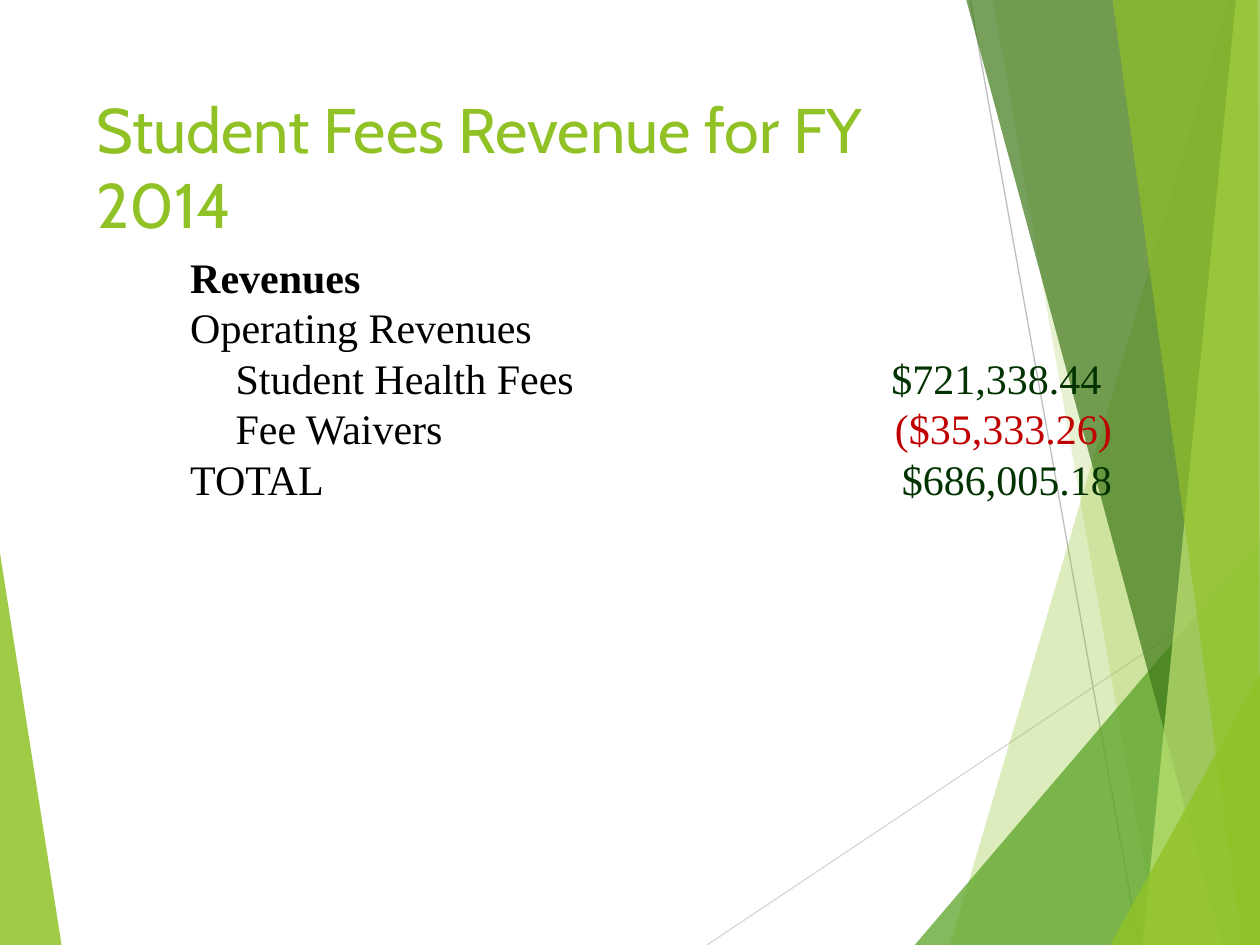
from pptx import Presentation
from pptx import util as u
from pptx.dml.color import RGBColor
from pptx.enum import shapes, text
from pptx.oxml.ns import qn
from lxml import etree

Pt = u.Pt
WIDTH, HEIGHT = 720, 540
LIME = RGBColor(0x90, 0xC2, 0x26)
GREEN = RGBColor(0x54, 0xA0, 0x21)
FOREST = RGBColor(0x3F, 0x78, 0x19)
PALE = RGBColor(0xC0, 0xE4, 0x74)
SILVER = RGBColor(0xBF, 0xBF, 0xBF)
LIGHT_GREY = RGBColor(0xD9, 0xD9, 0xD9)
BLACK = RGBColor(0, 0, 0)
INCOME = RGBColor(0, 0x33, 0)
DEDUCTION = RGBColor(0xC0, 0, 0)
PLAIN_TABLE = "{2D5ABB26-0587-4C30-8999-92F81FD0307C}"

LEFT_FACET = ([(0, 316), (35.2, 540), (0, 540)], LIME, 85)
RIGHT_FACETS = [
    ([(702, 0), (542.9, 540), (720, 540), (720, 0)], LIME, 30),
    ([(567.4, 0), (661.7, 540), (720, 540), (720, 0)], LIME, 20),
    ([(522.7, 540), (720, 308.9), (720, 540)], GREEN, 72),
    ([(552.2, 0), (698.4, 540), (720, 540), (720, 0)], FOREST, 70),
    ([(706.3, 0), (653, 540), (720, 540), (720, 0)], PALE, 70),
    ([(635.8, 0), (709.9, 540), (720, 540), (718.6, 0)], LIME, 65),
    ([(634.3, 540), (720, 385.2), (720, 540)], LIME, 80),
]

# label, label indent, label is bold, amount, amount colour, amount indent
REVENUES = [
    ("Revenues", 0, True, "", INCOME, 0),
    ("Operating Revenues", 0, False, "", INCOME, 0),
    ("Student Health Fees", 26, False, "$721,338.44", INCOME, 6),
    ("Fee Waivers", 26, False, "($35,333.26)", DEDUCTION, 0),
    ("TOTAL", 0, False, "$686,005.18", INCOME, 0),
]


class Deck:
    title_font = {"name": "Cabin", "size": Pt(36)}
    table_font = {"name": "Times New Roman", "size": Pt(24)}
    inset = 0.7

    def __init__(self, slide):
        self.s = slide

    def add_text(self, p, wording, font, color, **extra):
        r = p.add_run()
        r.text = wording
        for key, value in {**font, **extra}.items():
            setattr(r.font, key, value)
        r.font.color.rgb = color

    def facet(self, points, color, opacity):
        """Draw a translucent polygon; opacity is in percent."""
        corners = [(Pt(x), Pt(y)) for x, y in points]
        builder = self.s.shapes.build_freeform(*corners[0], scale=1.0)
        builder.add_line_segments(corners[1:], close=True)
        sp = builder.convert_to_shape()
        sp.shadow.inherit = False
        sp.line.fill.background()
        sp.fill.solid()
        sp.fill.fore_color.rgb = color
        clr = sp._element.spPr.find(".//" + qn("a:srgbClr"))
        etree.SubElement(clr, qn("a:alpha"), val=str(opacity * 1000))

    def line(self, start, end, color):
        sp = self.s.shapes.add_connector(
            shapes.MSO_CONNECTOR.STRAIGHT, *map(Pt, start + end))
        sp.line.color.rgb = color
        sp.line.width = Pt(0.75)
        etree.SubElement(sp._element.spPr, qn("a:effectLst"))

    def title(self, wording, x, y, w, h):
        sp = self.s.shapes.add_textbox(*map(Pt, (x, y, w, h)))
        tf = sp.text_frame
        tf.word_wrap = True
        tf.vertical_anchor = text.MSO_ANCHOR.TOP
        self.add_text(tf.paragraphs[0], wording, self.title_font, LIME)

    def cell(self, cell, wording, color, left=0, right=0, bold=False,
             align=text.PP_ALIGN.LEFT):
        layout = {"margin_left": Pt(left + self.inset),
                  "margin_right": Pt(right + self.inset),
                  "margin_top": 0, "margin_bottom": 0,
                  "vertical_anchor": text.MSO_ANCHOR.BOTTOM}
        for key, value in layout.items():
            setattr(cell, key, value)
        cell.fill.background()
        p = cell.text_frame.paragraphs[0]
        p.alignment = align
        if wording:
            self.add_text(p, wording, self.table_font, color, bold=bold)
        else:
            p.font.size = self.table_font["size"]

    def revenue_table(self, rows, x, y, widths, row_height):
        frame = self.s.shapes.add_table(
            len(rows), len(widths), Pt(x), Pt(y),
            Pt(sum(widths)), Pt(row_height * len(rows)))
        table = frame.table
        table.first_row = table.horz_banding = False
        table._tbl.tblPr.find(qn("a:tableStyleId")).text = PLAIN_TABLE
        for column, width in zip(table.columns, widths):
            column.width = Pt(width)
        for row, (label, indent, bold, amount, color, gap) in zip(table.rows, rows):
            row.height = Pt(row_height)
            name, spacer, value = row.cells
            self.cell(name, label, BLACK, left=indent, bold=bold)
            self.cell(spacer, "", BLACK)
            self.cell(value, amount, color, right=gap,
                      align=text.PP_ALIGN.RIGHT)


def main():
    prs = Presentation()
    prs.slide_width, prs.slide_height = Pt(WIDTH), Pt(HEIGHT)
    deck = Deck(prs.slides.add_slide(prs.slide_layouts[6]))
    deck.facet(*LEFT_FACET)
    deck.line((404, HEIGHT), (WIDTH, 329), LIGHT_GREY)
    deck.line((554.4, 0), (650.9, HEIGHT), SILVER)
    for facet in RIGHT_FACETS:
        deck.facet(*facet)
    deck.title("Student Fees Revenue for FY 2014", 48, 48, 500, 104)
    deck.revenue_table(REVENUES, 108, 144, (321, 34, 173), 27.4)
    prs.save("out.pptx")


if __name__ == "__main__":
    main()
